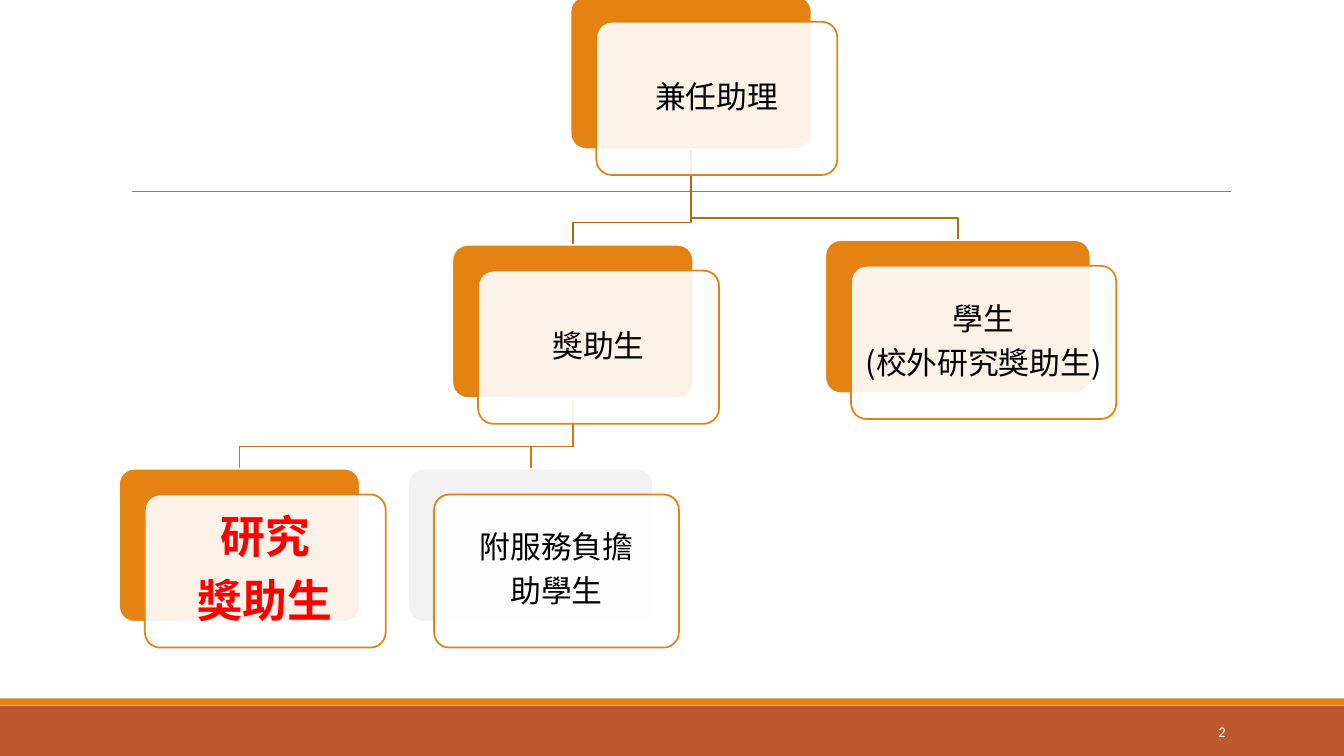
from lxml import etree
from pptx import Presentation
from pptx import util as u
from pptx.dml.color import RGBColor
from pptx.enum import shapes, text
from pptx.oxml.ns import qn

ORANGE, RUST, WHITE, BLACK = "E48312", "BD582C", "FFFFFF", "000000"
CARD_HEIGHT = 3.86
FRONT_OFFSET = 0.65
BEND_ABOVE_CHILD = 0.56


def rgb(value):
    return RGBColor.from_string(value)


class OrgSlide:
    """Draws the parts of an organisation chart on one slide; lengths are in cm."""
    cjk_font = "Noto Sans CJK SC"
    number_font = "Calibri"
    line_width = 1.25

    def __init__(self, slide):
        self.slide = slide

    def block(self, kind, left, top, width, height, fill, outline=None):
        block = self.slide.shapes.add_shape(
            kind, u.Cm(left), u.Cm(top), u.Cm(width), u.Cm(height))
        block.shadow.inherit = False
        block.fill.solid()
        block.fill.fore_color.rgb = rgb(fill)
        if outline:
            block.line.color.rgb = rgb(outline)
            block.line.width = u.Pt(self.line_width)
        else:
            block.line.fill.background()
        return block

    def band(self, top, height, color):
        self.block(shapes.MSO_SHAPE.RECTANGLE, 0, top, 33.87, height, color)

    def rule(self, left, right, y):
        rule = self.slide.shapes.add_connector(
            shapes.MSO_CONNECTOR.STRAIGHT, u.Cm(left), u.Cm(y), u.Cm(right), u.Cm(y))
        rule.line.color.rgb = rgb("808080")
        rule.line.width = u.Pt(0.5)
        etree.SubElement(rule._element.spPr, qn("a:effectLst"))

    def branch(self, parent, child, color):
        """Right-angled line from the bottom of one card to the top of another."""
        start_x, start_y = parent["left"] + parent["width"] / 2, parent["top"] + CARD_HEIGHT
        end_x, end_y = child["left"] + child["width"] / 2, child["top"]
        bend_y = end_y - BEND_ABOVE_CHILD
        builder = self.slide.shapes.build_freeform(u.Cm(start_x), u.Cm(start_y))
        corners = [(start_x, bend_y), (end_x, bend_y), (end_x, end_y)]
        builder.add_line_segments([(u.Cm(x), u.Cm(y)) for x, y in corners], close=False)
        branch = builder.convert_to_shape()
        branch.shadow.inherit = False
        branch.fill.background()
        branch.line.color.rgb = rgb(color)
        branch.line.width = u.Pt(self.line_width)

    def card(self, left, top, width, lines, back=ORANGE, size=22, color=BLACK,
             bold=False, inset=0.23):
        """Coloured back plate with a translucent, labelled plate in front."""
        rounded = shapes.MSO_SHAPE.ROUNDED_RECTANGLE
        plate = self.block(rounded, left, top, width, CARD_HEIGHT, back, WHITE)
        label = self.block(rounded, left + FRONT_OFFSET, top + FRONT_OFFSET,
                           width, CARD_HEIGHT, WHITE, ORANGE)
        for part in (plate, label):
            part.adjustments[0] = 0.1
        white = label._element.spPr.find(qn("a:solidFill"))[0]
        etree.SubElement(white, qn("a:alpha"), val="90000")

        frame = label.text_frame
        frame.word_wrap = True
        frame.vertical_anchor = text.MSO_ANCHOR.MIDDLE
        frame.margin_left = frame.margin_right = u.Cm(inset)
        frame.margin_top = frame.margin_bottom = u.Cm(inset)
        for index, line in enumerate(lines):
            paragraph = frame.add_paragraph() if index else frame.paragraphs[0]
            paragraph.alignment = text.PP_ALIGN.CENTER
            paragraph.line_spacing = 0.9
            paragraph.space_after = u.Pt(0.35 * size)
            run = paragraph.add_run()
            run.text = line
            run.font.size = u.Pt(size)
            run.font.bold = bold
            run.font.color.rgb = rgb(color)
            run.font.name = self.cjk_font
            etree.SubElement(run.font._element, qn("a:ea"), typeface=self.cjk_font)

    def page_number(self, number, left, top, width, height):
        box = self.slide.shapes.add_textbox(
            u.Cm(left), u.Cm(top), u.Cm(width), u.Cm(height))
        frame = box.text_frame
        frame.word_wrap = True
        frame.vertical_anchor = text.MSO_ANCHOR.MIDDLE
        paragraph = frame.paragraphs[0]
        paragraph.alignment = text.PP_ALIGN.RIGHT
        run = paragraph.add_run()
        run.text = str(number)
        run.font.size = u.Pt(10.5)
        run.font.name = self.number_font
        run.font.color.rgb = rgb(WHITE)


def main():
    deck = Presentation()
    deck.slide_width, deck.slide_height = u.Cm(33.87), u.Cm(19.05)
    chart = OrgSlide(deck.slides.add_slide(deck.slide_layouts[6]))

    chart.band(17.78, 1.27, RUST)
    chart.band(17.6, 0.17, ORANGE)
    chart.rule(3.33, 31.01, 4.83)

    assistant = dict(left=14.38, top=-0.1, width=6.07, lines=["兼任助理"])
    grantee = dict(left=11.4, top=6.17, width=6.07, lines=["獎助生"])
    research = dict(left=3, top=11.81, width=6.07, lines=["研究", "獎助生"],
                    size=32, color="FF0000", bold=True, inset=0.33)
    service = dict(left=10.29, top=11.81, width=6.17, lines=["附服務負擔", "助學生"],
                   back="F2F2F2")
    student = dict(left=20.8, top=6.05, width=6.68, lines=["學生", "(校外研究獎助生)"])

    for parent, children, color in [(assistant, (student, grantee), "B7690E"),
                                    (grantee, (service, research), "CF7710")]:
        for child in children:
            chart.branch(parent, child, color)
    for card in (assistant, grantee, research, service, student):
        chart.card(**card)

    chart.page_number(2, 27.51, 17.93, 3.63, 1.02)
    deck.save("out.pptx")


if __name__ == "__main__":
    main()
